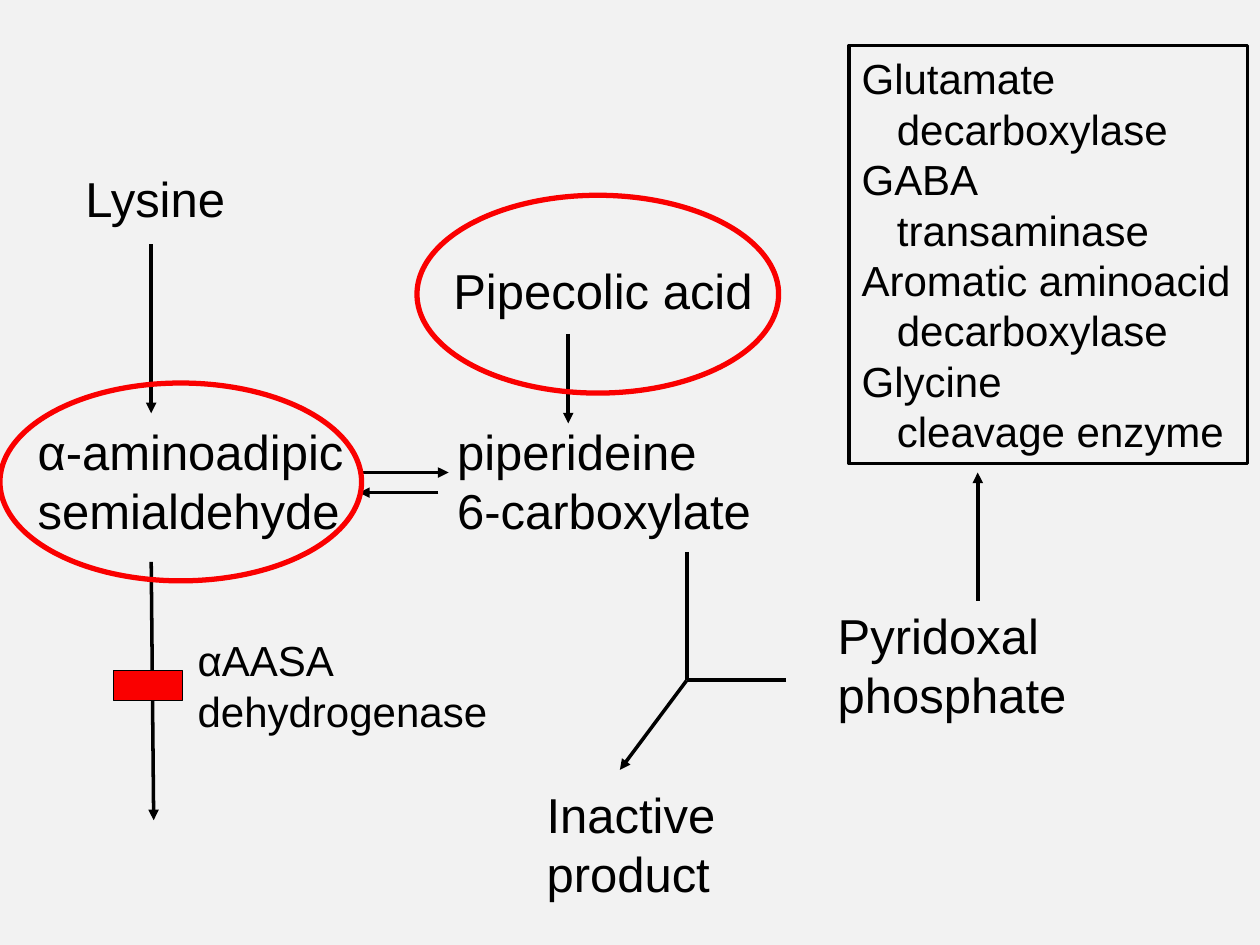
import pptx
import pptx.dml.color
import pptx.enum.shapes
import pptx.enum.text
import pptx.oxml
import pptx.oxml.ns
import pptx.util

theme = {
    "font": "Arial",
    "ink": pptx.dml.color.RGBColor.from_string("000000"),
    "red": pptx.dml.color.RGBColor.from_string("FA0000"),
    "paper": pptx.dml.color.RGBColor.from_string("F2F2F2"),
    "compound": pptx.util.Pt(28),
    "enzyme": pptx.util.Pt(24),
}

deck = pptx.Presentation()
deck.slide_width = pptx.util.Inches(10)
deck.slide_height = pptx.util.Inches(7.5)
page = deck.slides.add_slide(deck.slide_layouts[6])
page.background.fill.solid()
page.background.fill.fore_color.rgb = theme["paper"]

# Grid of 100 columns by 75 rows
column = deck.slide_width / 100
row = deck.slide_height / 75
shape_kind = pptx.enum.shapes.MSO_SHAPE


def grid(left, top, width, height):
    return [round(left * column), round(top * row),
            round(width * column), round(height * row)]


def write(box, lines, size):
    """Fill a box with (text, indent in columns) lines."""
    frame = box.text_frame
    frame.word_wrap = False
    frame.auto_size = pptx.enum.text.MSO_AUTO_SIZE.SHAPE_TO_FIT_TEXT
    for number, (text, indent) in enumerate(lines):
        para = frame.add_paragraph() if number else frame.paragraphs[0]
        para.text = text
        para.alignment = pptx.enum.text.PP_ALIGN.LEFT
        para.font.name = theme["font"]
        para.font.size = size
        para.font.color.rgb = theme["ink"]
        if indent:
            para._p.get_or_add_pPr().set("marL", str(round(indent * column)))


# Compounds and the blocked enzyme
labels = [
    (5.8, 12.9, 13.3, 5.7, "compound", ["Lysine"]),
    (2, 33, 27.5, 10.3, "compound", ["α-aminoadipic", "semialdehyde"]),
    (35.3, 33, 25.4, 10.3, "compound", ["piperideine", "6-carboxylate"]),
    (65.5, 47.6, 20.2, 10.3, "compound", ["Pyridoxal", "phosphate"]),
    (35, 20.2, 25.8, 5.7, "compound", ["Pipecolic acid"]),
    (42.4, 61.8, 15.4, 10.3, "compound", ["Inactive", "product"]),
    (14.7, 49.9, 25, 9, "enzyme", ["αAASA", "dehydrogenase"]),
]
for left, top, width, height, size, lines in labels:
    box = page.shapes.add_textbox(*grid(left, top, width, height))
    write(box, [(line, 0) for line in lines], theme[size])

# Reaction lines: start, end, weight, arrowhead
reactions = [
    ((12, 19.4), (12, 32.8), 2, True),
    ((12, 44.6), (12.2, 65.1), 2, True),
    ((45.1, 26.5), (45.1, 33.6), 2, True),
    ((28.5, 37.5), (35.6, 37.5), 2, True),
    ((34.8, 39.1), (28.5, 39.1), 2, True),
    ((54.5, 54), (49.2, 61.1), 2, True),
    ((54.5, 43.8), (54.5, 54), 2.25, False),
    ((62.4, 54), (54.5, 54), 2.25, False),
    ((77.6, 47.7), (77.6, 37.5), 2, True),
]
for start, end, weight, arrowhead in reactions:
    reaction = page.shapes.add_connector(
        pptx.enum.shapes.MSO_CONNECTOR.STRAIGHT, *grid(*start, *end))
    reaction.line.color.rgb = theme["ink"]
    reaction.line.width = pptx.util.Pt(weight)
    if arrowhead:
        tail = pptx.oxml.ns.qn("a:tailEnd")
        reaction.line._get_or_add_ln().makeelement(tail)
        line_xml = reaction.line._get_or_add_ln()
        line_xml.append(line_xml.makeelement(tail, {"type": "triangle"}))
    properties = reaction._element.spPr
    properties.append(properties.makeelement(pptx.oxml.ns.qn("a:effectLst")))

# Enzyme frame, block on the pathway, rings round the markers
outlines = [
    (shape_kind.RECTANGLE, (67.4, 3.6, 31.6, 33.2), None, "ink", 2),
    (shape_kind.RECTANGLE, (9, 53.2, 5.5, 2.4), "red", "ink", 0.75),
    (shape_kind.OVAL, (0, 30.4, 28.7, 15.7), None, "red", 3),
    (shape_kind.OVAL, (33.1, 15.5, 28.7, 15.7), None, "red", 3),
]
drawn = []
for kind, place, fill, line, weight in outlines:
    shape = page.shapes.add_shape(kind, *grid(*place))
    shape.shadow.inherit = False
    if fill:
        shape.fill.solid()
        shape.fill.fore_color.rgb = theme[fill]
    else:
        shape.fill.background()
    shape.line.color.rgb = theme[line]
    shape.line.width = pptx.util.Pt(weight)
    drawn.append(shape)

# Enzymes that depend on pyridoxal phosphate
enzymes = [
    ("Glutamate", "decarboxylase"),
    ("GABA", "transaminase"),
    ("Aromatic aminoacid", "decarboxylase"),
    ("Glycine", "cleavage enzyme"),
]
write(drawn[0],
      [line for first, second in enzymes for line in ((first, 0), (second, 2.8))],
      theme["enzyme"])

deck.save("out.pptx")
